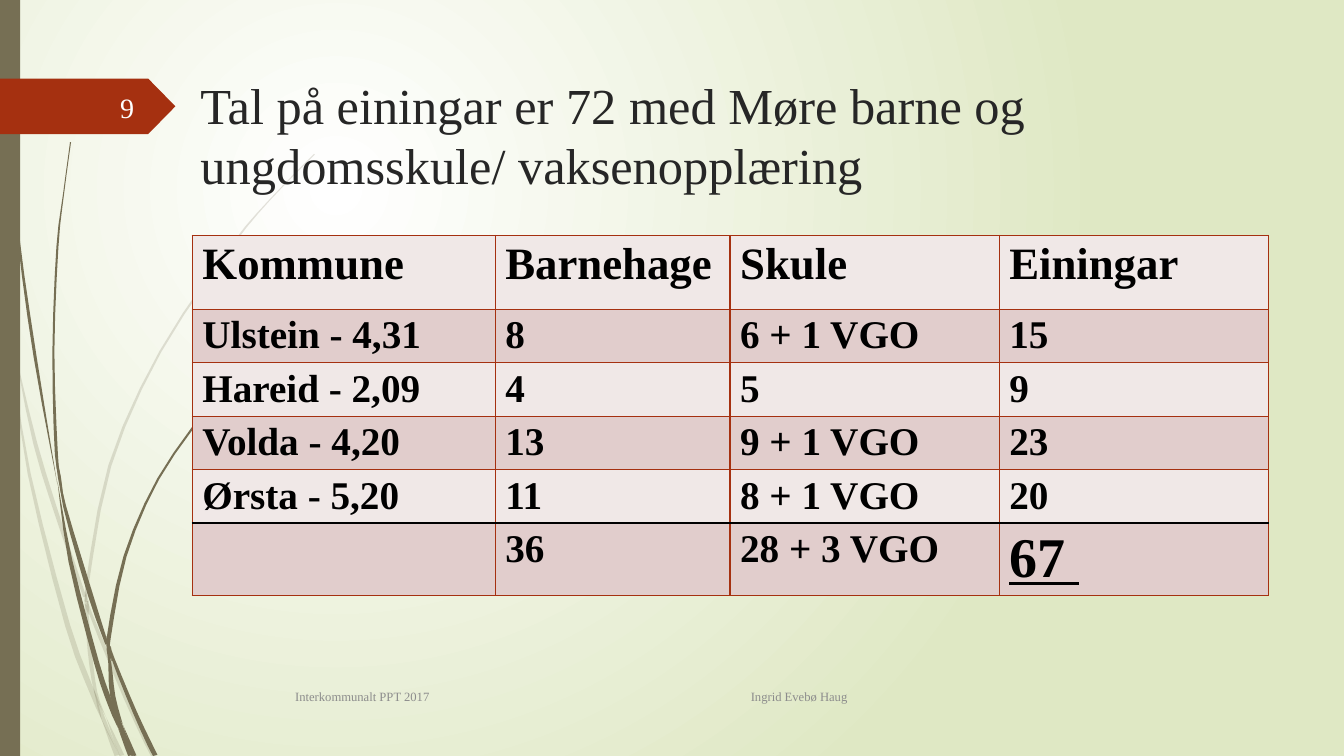
from dataclasses import dataclass
from math import hypot

from lxml.etree import SubElement as Sub
from pptx import Presentation
from pptx.dml.color import RGBColor as Rgb
from pptx.enum.shapes import MSO_SHAPE as Kind
from pptx.enum.text import MSO_ANCHOR as Anchor, PP_ALIGN as Align
from pptx.oxml.ns import qn
from pptx.util import Emu, Inches, Pt


@dataclass(frozen=True)
class Theme:
    font: str = "Times New Roman"
    ink: str = "000000"
    head: str = "262626"
    grey: str = "8C8C8C"
    white: str = "FEFFFF"
    glow: str = "FFFFFF"
    field: str = "DFE8C4"
    bark: str = "766F54"
    rust: str = "A53010"
    bands: tuple = ("F0E8E7", "E1CDCC")
    title: int = 36
    top: int = 32
    body: int = 28
    total: int = 40
    page: int = 20
    foot: int = 9


T = Theme()
UNIT = Inches(0.1)  # one grid step; the slide is 133.33 by 75 steps
COLS, ROWS = 133.33, 75

# Blades of grass: (column, row, thickness) along the middle of each
PALE = [
    [(0, 29, .4), (.5, 31.5, .3), (1.1, 35, 0)],
    [(1.4, 34.5, 0), (3.5, 44, .4), (6, 52.1, .4), (8.4, 59.2, .3)],
    [(8.8, 59.6, 0), (9, 60.9, .3), (12.5, 69.3, .4), (15.2, 75, .5)],
    [(10.5, 71.1, 0), (12.1, 75, .5)],
    [(1.1, 35, 0), (2.9, 47, .3), (6.7, 62, .5), (9.2, 68.8, .5), (10.1, 71.4, 0)],
    [(8.4, 59.9, 0), (8.6, 60.6, .3), (8.9, 64.6, .4), (9.5, 68.7, .3), (10.5, 71.1, 0)],
    [(31.2, 15.3, .1), (26.8, 19.8, .1), (22.9, 24.5, .2), (15.9, 34.9, .2),
     (10.9, 46.2, .3), (8.6, 58.4, .3), (8.8, 59.6, 0)],
    [(10.1, 71.4, 0), (11.6, 75, .5)],
    [(8.5, 58.6, 0), (8.6, 59.9, .4), (8.8, 61, 0)],
    [(9.3, 68.3, 0), (10.2, 71.2, .4), (11.9, 75, 0)],
]
DARK = [
    [(.4, 0, .1), (.5, 4.8, .1), (.8, 11, .1), (1.8, 23.3, .2),
     (3.5, 35.5, .3), (5.7, 48.1, 0)],
    [(6, 47.2, 0), (6.4, 50.2, .3), (9, 59.1, .5), (10.6, 63.9, .3)],
    [(11, 64.1, 0), (11.2, 65.3, .3), (13.4, 70.7, .4), (15.4, 75, .5)],
    [(5.7, 47.7, 0), (7, 55.7, .4), (9.6, 65.8, .5), (11, 70, .5), (11.7, 72.2, 0)],
    [(7, 14.1, .1), (6.3, 19.3, .1), (5.7, 24.5, .2), (5.3, 34.9, .2),
     (5.6, 45.1, .3), (6, 47.2, 0)],
    [(12.2, 71.9, 0), (13.4, 75, .3)],
    [(5.5, 44.9, 0), (5.9, 47.4, .3), (6.4, 50.5, 0)],
    [(26, 34.4, .1), (23.1, 37.4, .1), (20.5, 40.6, .2), (15.7, 47.5, .2),
     (12.4, 55.2, .3), (10.8, 63.2, .4), (11, 64.1, 0)],
    [(11.7, 72.2, 0), (12.9, 75, .4)],
    [(10.6, 64.5, 0), (10.9, 65.8, .3), (11.2, 69.1, .5), (12.2, 71.9, 0)],
    [(10.6, 63.1, 0), (10.8, 64.5, .4), (11.1, 65.6, 0)],
    [(11, 69.1, 0), (11.8, 71.7, .5), (13.2, 75, .3)],
]

TABLE = [
    ["Kommune", "Barnehage", "Skule", "Einingar"],
    ["Ulstein - 4,31", "8", "6 + 1 VGO", "15"],
    ["Hareid - 2,09", "4", "5", "9"],
    ["Volda - 4,20", "13", "9 + 1 VGO", "23"],
    ["Ørsta - 5,20", "11", "8 + 1 VGO", "20"],
    ["", "36", "28 + 3 VGO", "67 "],
]
WIDTHS = [30.05, 23.3, 26.7, 26.7]
HEIGHTS = [7.35, 5.3, 5.3, 5.3, 5.3, 7.15]


def grid(*steps):
    return [Emu(round(s * UNIT)) for s in steps]


def paint(shape, color):
    shape.shadow.inherit = False
    shape.fill.solid()
    shape.fill.fore_color.rgb = Rgb.from_string(color)
    shape.line.fill.background()


def write(para, text, size, color, bold=False, under=False):
    run = para.add_run()
    run.text = text
    font = run.font
    font.name, font.size, font.bold = T.font, Pt(size), bold
    font.underline = under
    font.color.rgb = Rgb.from_string(color)


def label(slide, box, text, size, color, anchor=Anchor.MIDDLE, align=Align.LEFT):
    frame = slide.shapes.add_textbox(*grid(*box)).text_frame
    frame.word_wrap, frame.vertical_anchor = True, anchor
    para = frame.paragraphs[0]
    para.alignment = align
    write(para, text, size, color)
    return para


def backdrop(slide):
    fill = slide.background.fill
    fill.gradient()
    for stop, pos, color in zip(fill.gradient_stops, (0, 1), (T.glow, T.field)):
        stop.position = pos
        stop.color.rgb = Rgb.from_string(color)
    grad = slide.element.find(".//" + qn("a:gradFill"))
    lin = grad.find(qn("a:lin"))
    if lin is not None:
        grad.remove(lin)
    ring = Sub(grad, qn("a:path"), path="circle")
    Sub(ring, qn("a:fillToRect"), l="50000", t="50000", r="100000", b="100000")


def smooth(knots, steps=3):
    """Catmull-Rom curve through the knots."""
    pts = [knots[0], *knots, knots[-1]]
    curve = []
    for a, b, c, d in zip(pts, pts[1:], pts[2:], pts[3:]):
        for i in range(steps):
            t = i / steps
            curve.append([
                (2 * q + (r - p) * t + (2 * p - 5 * q + 4 * r - s) * t ** 2
                 + (3 * q - p - 3 * r + s) * t ** 3) / 2
                for p, q, r, s in zip(a, b, c, d)])
    return curve + [list(knots[-1])]


def blade(slide, box, knots, color, alpha=None):
    mid = smooth(knots)
    left, right = [], []
    for i, (x, y, thick) in enumerate(mid):
        ax, ay, _ = mid[max(i - 1, 0)]
        bx, by, _ = mid[min(i + 1, len(mid) - 1)]
        half = thick / 2 / hypot(bx - ax, by - ay)
        dx, dy = (by - ay) * half, (ax - bx) * half
        left.append(grid(box[0] + x + dx, box[1] + min(y + dy, box[3])))
        right.append(grid(box[0] + x - dx, box[1] + min(y - dy, box[3])))
    edge = left + right[::-1]
    pen = slide.shapes.build_freeform(*edge[0], scale=1.0)
    pen.add_line_segments(edge[1:], close=True)
    leaf = pen.convert_to_shape()
    paint(leaf, color)
    if alpha:
        tint = leaf.fill._xPr.find(".//" + qn("a:srgbClr"))
        Sub(tint, qn("a:alpha"), val=str(alpha * 1000))


def side(slide, box):
    x, y, _, high = box
    for knots in PALE:
        blade(slide, box, knots, T.bark, 20)
    for knots in DARK:
        blade(slide, box, knots, T.bark)
    # Bar along the edge
    paint(slide.shapes.add_shape(Kind.RECTANGLE, *grid(x, y, 2, high)), T.bark)
    # Page tag
    tag = slide.shapes.add_shape(Kind.PENTAGON, *grid(x, y + 7.8, 17.4, 5.5))
    tag.adjustments[0] = 0.49
    paint(tag, T.rust)


def border(cell, side, index, color):
    props = cell._tc.get_or_add_tcPr()
    line = Sub(props, qn("a:ln" + side), w=str(Pt(1)))
    Sub(Sub(line, qn("a:solidFill")), qn("a:srgbClr"), val=color)
    props.insert(index, line)


def table(slide, box):
    sheet = slide.shapes.add_table(len(TABLE), len(WIDTHS), *grid(*box)).table
    for col, width in zip(sheet.columns, grid(*WIDTHS)):
        col.width = width
    for row, high in zip(sheet.rows, grid(*HEIGHTS)):
        row.height = high
    last = len(TABLE) - 1
    for r, texts in enumerate(TABLE):
        for c, text in enumerate(texts):
            cell = sheet.cell(r, c)
            cell.margin_top, cell.margin_bottom = grid(0.45, 0.1)
            cell.fill.solid()
            cell.fill.fore_color.rgb = Rgb.from_string(T.bands[r % 2])
            for i, edge in enumerate("LRTB"):
                rule = (r, edge) in ((last, "T"), (last - 1, "B"))
                border(cell, edge, i, T.ink if rule else T.rust)
            total = r == last and c == len(texts) - 1
            size = T.total if total else T.body if r else T.top
            if text:
                write(cell.text_frame.paragraphs[0], text, size, T.ink, True, total)


def footer(slide, box):
    para = label(slide, box, "Interkommunalt PPT 2017\tIngrid Evebø Haug", T.foot, T.grey)
    tabs = Sub(para._p.get_or_add_pPr(), qn("a:tabLst"))
    Sub(tabs, qn("a:tab"), pos=str(grid(45.2)[0]), algn="l")


def main():
    deck = Presentation()
    deck.slide_width, deck.slide_height = grid(COLS, ROWS)
    slide = deck.slides.add_slide(deck.slide_layouts[6])
    backdrop(slide)
    side(slide, (0, 0, 32, ROWS))
    label(slide, (18.9, 6.85, 106.9, 14),
          "Tal på einingar er 72 med Møre barne og ungdomsskule/ vaksenopplæring",
          T.title, T.head, Anchor.TOP)
    table(slide, (19.08, 23.35, sum(WIDTHS), sum(HEIGHTS)))
    footer(slide, (28.3, 67.1, 83.3, 4))
    label(slide, (5.8, 8.6, 8.5, 4), "9", T.page, T.white, align=Align.RIGHT)
    deck.save("out.pptx")


if __name__ == "__main__":
    main()
